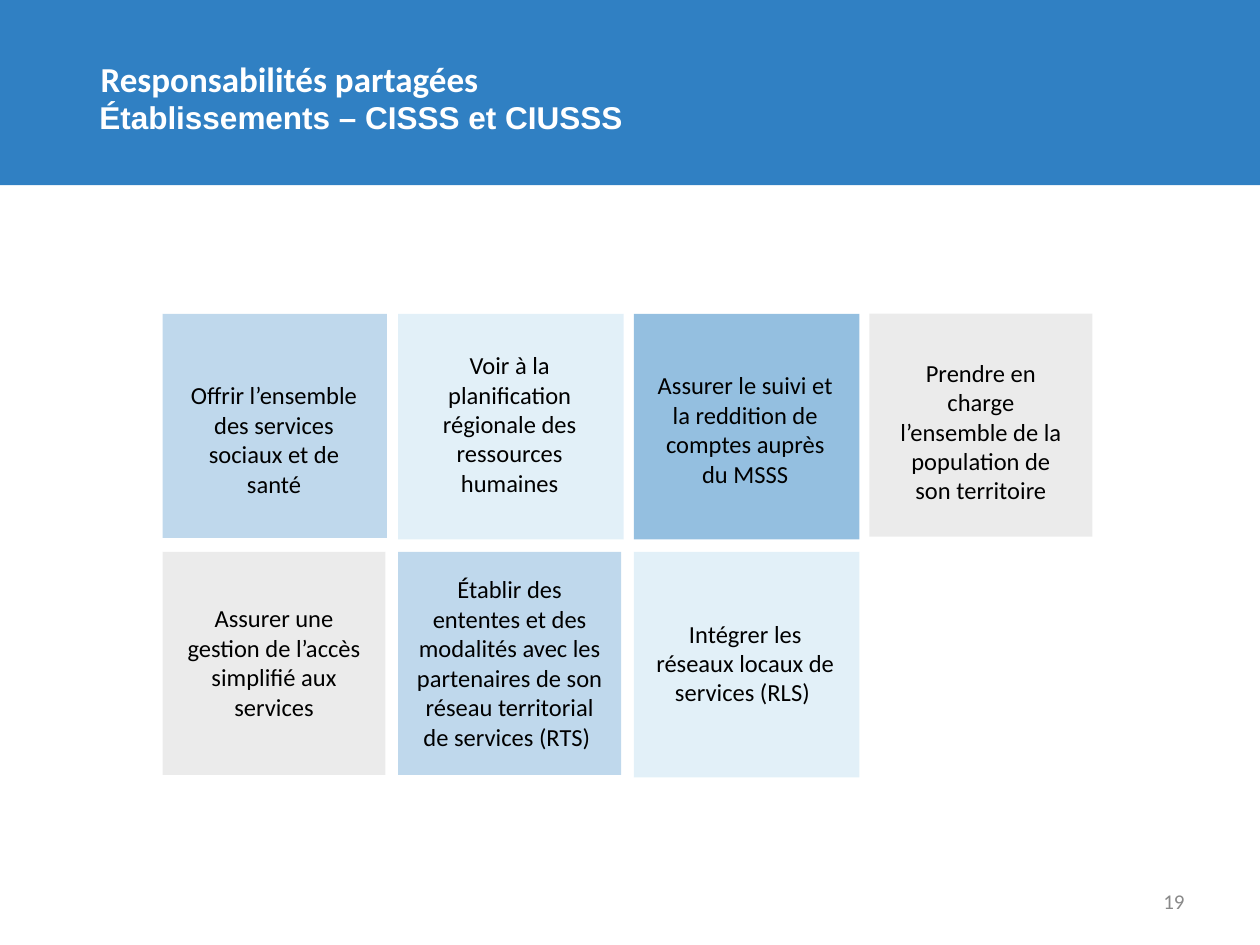
from lxml.etree import SubElement
from pptx import Presentation
from pptx.dml.color import RGBColor
from pptx.enum.shapes import MSO_SHAPE
from pptx.enum.text import MSO_ANCHOR, MSO_AUTO_SIZE, PP_ALIGN
from pptx.oxml.ns import qn
from pptx.util import Inches, Pt

SKY, ICE, BLUE, GREY = "80B3DB", "C6E3F3", "2B80C3", "D9D9D9"
LEFT, TOP, STEP, ROW = 1.29, 2.49, 1.87, 1.89
INSET = 0.08

# column, row, colour, side, label top, label width, label height, label
TILES = [
    (0, 0, SKY, 1.78, 2.97, 1.61, 1.04,
     "Offrir l’ensemble des services sociaux et de santé"),
    (1, 0, ICE, 1.79, 2.73, 1.61, 1.28,
     "Voir à la planification régionale des ressources humaines"),
    (2, 0, BLUE, 1.79, 2.89, 1.61, 1.04,
     "Assurer le suivi et la reddition de comptes auprès du MSSS"),
    (3, 0, GREY, 1.77, 2.79, 1.61, 1.28,
     "Prendre en charge l’ensemble de la population de son territoire"),
    (0, 1, GREY, 1.77, 4.74, 1.61, 1.04,
     "Assurer une gestion de l’accès simplifié aux services"),
    (1, 1, SKY, 1.77, 4.51, 1.71, 1.52,
     "Établir des ententes et des modalités avec les partenaires "
     "de son réseau territorial de services (RTS) "),
    (2, 1, ICE, 1.79, 4.86, 1.61, 0.81,
     "Intégrer les réseaux locaux de services (RLS) "),
]


def color(text):
    """Turn a hex string into a colour."""
    return RGBColor.from_string(text)


class Board:
    """Hold the style and the current slide."""

    face = "Calibri"

    def __init__(self, slide):
        """Keep the slide to draw on."""
        self.shapes = slide.shapes

    def rect(self, x, y, w, h, fill, alpha=None):
        """Add a plain rectangle, see-through if alpha is given in percent."""
        box = self.shapes.add_shape(
            MSO_SHAPE.RECTANGLE, Inches(x), Inches(y), Inches(w), Inches(h))
        box.shadow.inherit = False
        box.line.fill.background()
        box.fill.solid()
        box.fill.fore_color.rgb = color(fill)
        if alpha:
            tone = box.fill._xPr.find(f".//{qn('a:srgbClr')}")
            SubElement(tone, qn("a:alpha"), val=str(alpha * 1000))

    def text(self, x, y, w, h, words, size, ink, align=PP_ALIGN.LEFT,
             anchor=MSO_ANCHOR.MIDDLE, face=None, bold=False, lead=None,
             grow=False):
        """Add a wrapped text box with one run."""
        box = self.shapes.add_textbox(
            Inches(x), Inches(y), Inches(w), Inches(h))
        frame = box.text_frame
        frame.word_wrap = True
        frame.vertical_anchor = anchor
        if grow:
            frame.auto_size = MSO_AUTO_SIZE.SHAPE_TO_FIT_TEXT
        para = frame.paragraphs[0]
        para.alignment = align
        if lead:
            para.line_spacing = Pt(lead)
        run = para.add_run()
        run.text = words
        run.font.name = face or self.face
        run.font.size = Pt(size)
        run.font.bold = bold
        run.font.color.rgb = color(ink)

    def title(self, x, y, words, size, face=None):
        """Add one bold white line of the heading."""
        self.text(x, y, 8.27, 0.71, words, size, "FFFFFF",
                  face=face, bold=True, lead=44)

    def label(self, x, y, w, h, words):
        """Add the centred text of a tile."""
        self.text(x, y, w, h, words, 14, "000000", PP_ALIGN.CENTER,
                  MSO_ANCHOR.TOP, grow=True)


def main():
    """Build the slide and save it."""
    deck = Presentation()
    deck.slide_width, deck.slide_height = Inches(10), Inches(7.5)
    board = Board(deck.slides.add_slide(deck.slide_layouts[6]))
    board.rect(0, 0, 10, 1.47, "3080C3")
    board.title(0.7, 0.13, "Responsabilités partagées", 20)
    board.title(0.69, 0.42, "Établissements – CISSS et CIUSSS", 18, "Arial")
    for col, row, fill, side, *_ in TILES:
        board.rect(LEFT + col * STEP, TOP + row * ROW, side, side, fill, 50)
    for col, row, fill, side, top, wide, high, words in TILES:
        mid = LEFT + INSET + col * STEP + 1.61 / 2
        board.label(mid - wide / 2, top, wide, high, words)
    board.text(7.17, 6.95, 2.33, 0.4, "19", 12, "898989", PP_ALIGN.RIGHT)
    deck.save("out.pptx")


if __name__ == "__main__":
    main()
